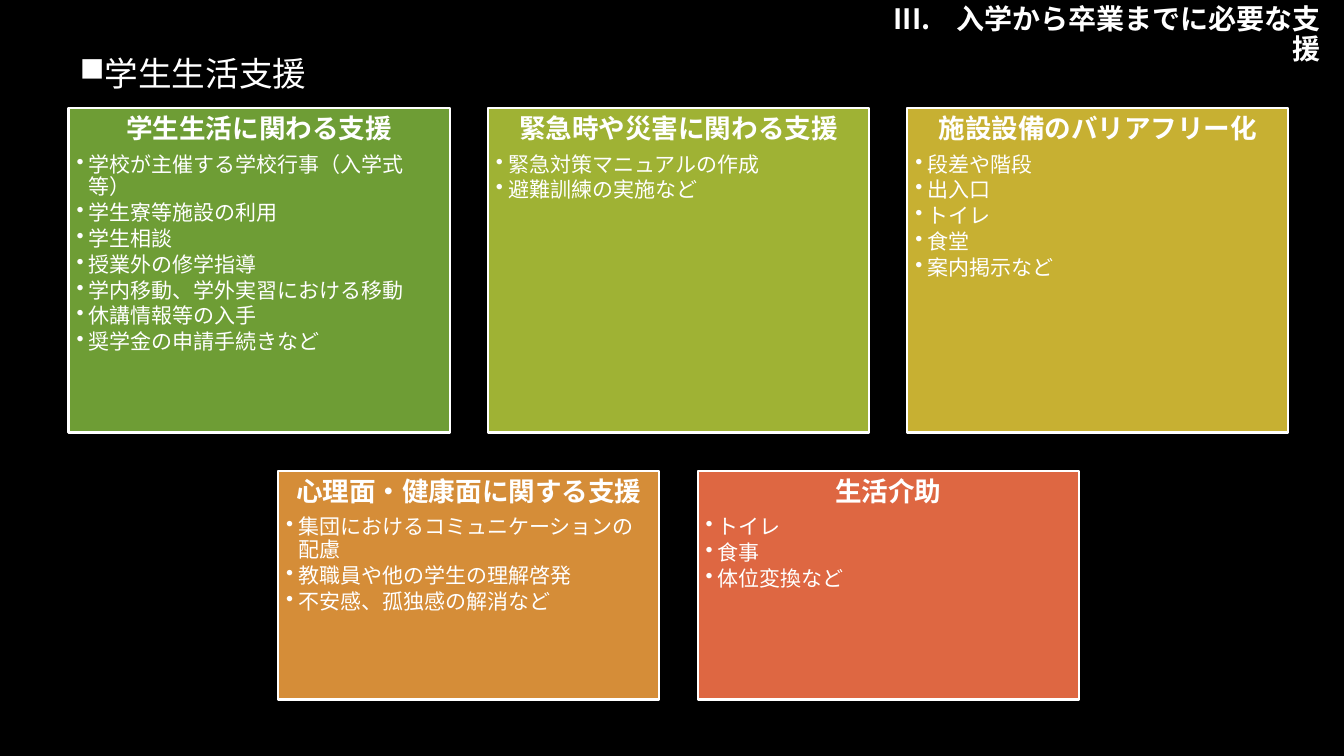
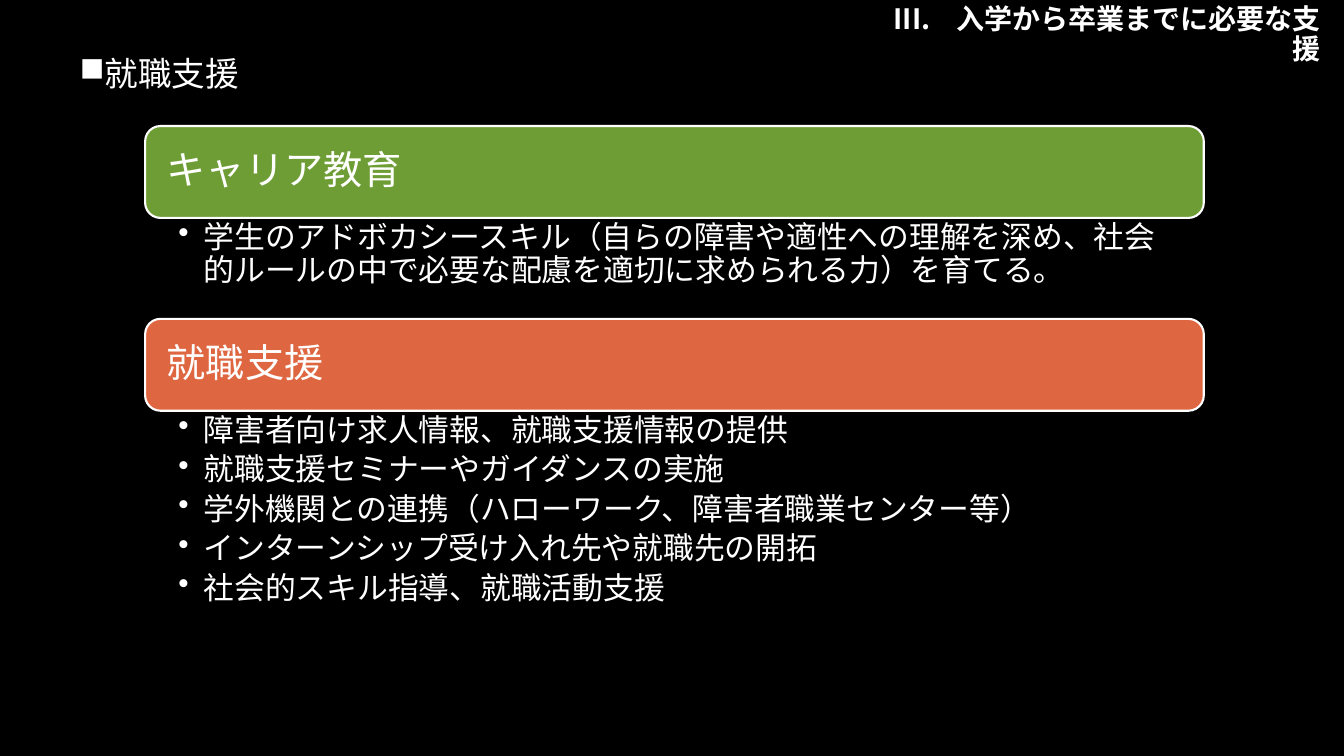
from collections import namedtuple

from lxml import etree
from pptx import Presentation
from pptx.dml.color import RGBColor
from pptx.enum.shapes import MSO_SHAPE
from pptx.enum.text import MSO_ANCHOR, PP_ALIGN
from pptx.oxml.ns import qn
from pptx.util import Inches, Pt

RECT, ROUNDED = MSO_SHAPE.RECTANGLE, MSO_SHAPE.ROUNDED_RECTANGLE
TOP, MIDDLE = MSO_ANCHOR.TOP, MSO_ANCHOR.MIDDLE
LEFT, CENTER, RIGHT = PP_ALIGN.LEFT, PP_ALIGN.CENTER, PP_ALIGN.RIGHT

WIDTH, HEIGHT = 13.33, 7.5
FONT = "Noto Sans CJK JP"
BLACK, WHITE = "000000", "FFFFFF"
GREEN, LIME, GOLD = "6E9D35", "9FB234", "C7B032"
ORANGE, RED = "D58D38", "DE6742"
CHAPTER = "入学から卒業までに必要な支援"
GAP_SHARE = 0.1

Box = namedtuple("Box", "left top width height")
Card = namedtuple("Card", "title color items")

CARD_ROWS = [
    (3.22, [
        Card("学生生活に関わる支援", GREEN, [
            "学校が主催する学校行事（入学式等）",
            "学生寮等施設の利用",
            "学生相談",
            "授業外の修学指導",
            "学内移動、学外実習における移動",
            "休講情報等の入手",
            "奨学金の申請手続きなど",
        ]),
        Card("緊急時や災害に関わる支援", LIME, [
            "緊急対策マニュアルの作成",
            "避難訓練の実施など",
        ]),
        Card("施設設備のバリアフリー化", GOLD, [
            "段差や階段", "出入口", "トイレ", "食堂", "案内掲示など",
        ]),
    ]),
    (2.27, [
        Card("心理面・健康面に関する支援", ORANGE, [
            "集団におけるコミュニケーションの配慮",
            "教職員や他の学生の理解啓発",
            "不安感、孤独感の解消など",
        ]),
        Card("生活介助", RED, ["トイレ", "食事", "体位変換など"]),
    ]),
]

SECTIONS = [
    (1, Card("キャリア教育", GREEN, [
        "学生のアドボカシースキル（自らの障害や適性への理解を深め、"
        "社会的ルールの中で必要な配慮を適切に求められる力）を育てる。",
    ])),
    (2.79, Card("就職支援", RED, [
        "障害者向け求人情報、就職支援情報の提供",
        "就職支援セミナーやガイダンスの実施",
        "学外機関との連携（ハローワーク、障害者職業センター等）",
        "インターンシップ受け入れ先や就職先の開拓",
        "社会的スキル指導、就職活動支援",
    ])),
]
BAR_WEIGHT = 0.91


def rgb(value):
    return RGBColor.from_string(value)


def percent_box(left, top, width, height):
    return Box(left * WIDTH / 100, top * HEIGHT / 100,
               width * WIDTH / 100, height * HEIGHT / 100)


def prepare_frame(frame, insets, anchor=TOP):
    frame.word_wrap = True
    frame.vertical_anchor = anchor
    frame.margin_left, frame.margin_top, frame.margin_right, frame.margin_bottom = map(Inches, insets)
    return frame


def add_text(slide, box, insets=(0.1, 0.05, 0.1, 0.05)):
    area = slide.shapes.add_textbox(*map(Inches, box))
    return prepare_frame(area.text_frame, insets)


def add_panel(slide, outline, box, color, inset, anchor=TOP):
    panel = slide.shapes.add_shape(outline, *map(Inches, box))
    panel.shadow.inherit = False
    panel.fill.solid()
    panel.fill.fore_color.rgb = rgb(color)
    panel.line.color.rgb = rgb(WHITE)
    panel.line.width = Pt(1.5)
    return prepare_frame(panel.text_frame, [inset] * 4, anchor)


def write(frame, text, size, first=False, bold=False, align=LEFT,
          after=0, margin=0, hanging=0, bullet=None, start=None):
    paragraph = frame.paragraphs[0] if first else frame.add_paragraph()
    properties = paragraph._p.get_or_add_pPr()
    properties.set("marL", str(Inches(margin)))
    properties.set("indent", str(-Inches(hanging)))
    if bullet:
        etree.SubElement(properties, qn("a:buChar"), char=bullet)
    elif start:
        etree.SubElement(properties, qn("a:buAutoNum"), type="romanUcPeriod", startAt=str(start))
    paragraph.alignment = align
    paragraph.line_spacing = 0.9
    paragraph.space_before = Pt(0)
    paragraph.space_after = Pt(size * after)
    run = paragraph.add_run()
    run.text = text
    run.font.size = Pt(size)
    run.font.bold = bold
    run.font.color.rgb = rgb(WHITE)
    run.font.name = FONT
    etree.SubElement(run._r.get_or_add_rPr(), qn("a:ea"), typeface=FONT)


def add_topic_slide(deck, topic):
    slide = deck.slides.add_slide(deck.slide_layouts[6])
    slide.background.fill.solid()
    slide.background.fill.fore_color.rgb = rgb(BLACK)
    chapter = add_text(slide, percent_box(65.34, 0, 33.68, 6.93))
    write(chapter, CHAPTER, 20, first=True, bold=True, align=RIGHT,
          margin=0.62, hanging=0.62, start=3)
    heading = add_text(slide, percent_box(2.18, 6.93, 25.96, 7.33))
    write(heading, topic, 24, first=True, margin=0.65, hanging=0.25, bullet="■")
    return slide


def add_card(slide, box, card):
    frame = add_panel(slide, RECT, box, card.color, 0.08)
    write(frame, card.title, 19, first=True, bold=True, align=CENTER, after=0.35)
    for item in card.items:
        write(frame, item, 15, after=0.15, margin=0.12, hanging=0.12, bullet="•")


def add_card_grid(slide, box, rows):
    columns = max(len(cards) for _, cards in rows)
    width = box.width / (columns + GAP_SHARE * (columns - 1))
    gap = width * GAP_SHARE
    unit = (box.height - gap * (len(rows) - 1)) / sum(weight for weight, _ in rows)
    top = box.top
    for weight, cards in rows:
        row_width = len(cards) * (width + gap) - gap
        left = box.left + (box.width - row_width) / 2
        for column, card in enumerate(cards):
            add_card(slide, Box(left + column * (width + gap), top, width, weight * unit), card)
        top += weight * unit + gap


def add_section_list(slide, box, sections):
    unit = box.height / sum(BAR_WEIGHT + weight for weight, _ in sections)
    bar_height = BAR_WEIGHT * unit
    top = box.top
    for weight, section in sections:
        bar = add_panel(slide, ROUNDED, Box(box.left, top, box.width, bar_height),
                        section.color, 0.17, MIDDLE)
        write(bar, section.title, 28, first=True)
        top += bar_height
        details = add_text(slide, Box(box.left, top, box.width, weight * unit),
                           (0.33, 0.04, 0.22, 0.04))
        for index, item in enumerate(section.items):
            write(details, item, 22, first=index == 0, after=0.2,
                  margin=0.25, hanging=0.25, bullet="•")
        top += weight * unit


def main():
    deck = Presentation()
    deck.slide_width, deck.slide_height = Inches(WIDTH), Inches(HEIGHT)
    campus_life = add_topic_slide(deck, "学生生活支援")
    add_card_grid(campus_life, percent_box(5.1, 14.27, 90.77, 78.27), CARD_ROWS)
    employment = add_topic_slide(deck, "就職支援")
    add_section_list(employment, percent_box(10.8, 16.67, 78.77, 74.93), SECTIONS)
    deck.save("out.pptx")


if __name__ == "__main__":
    main()
